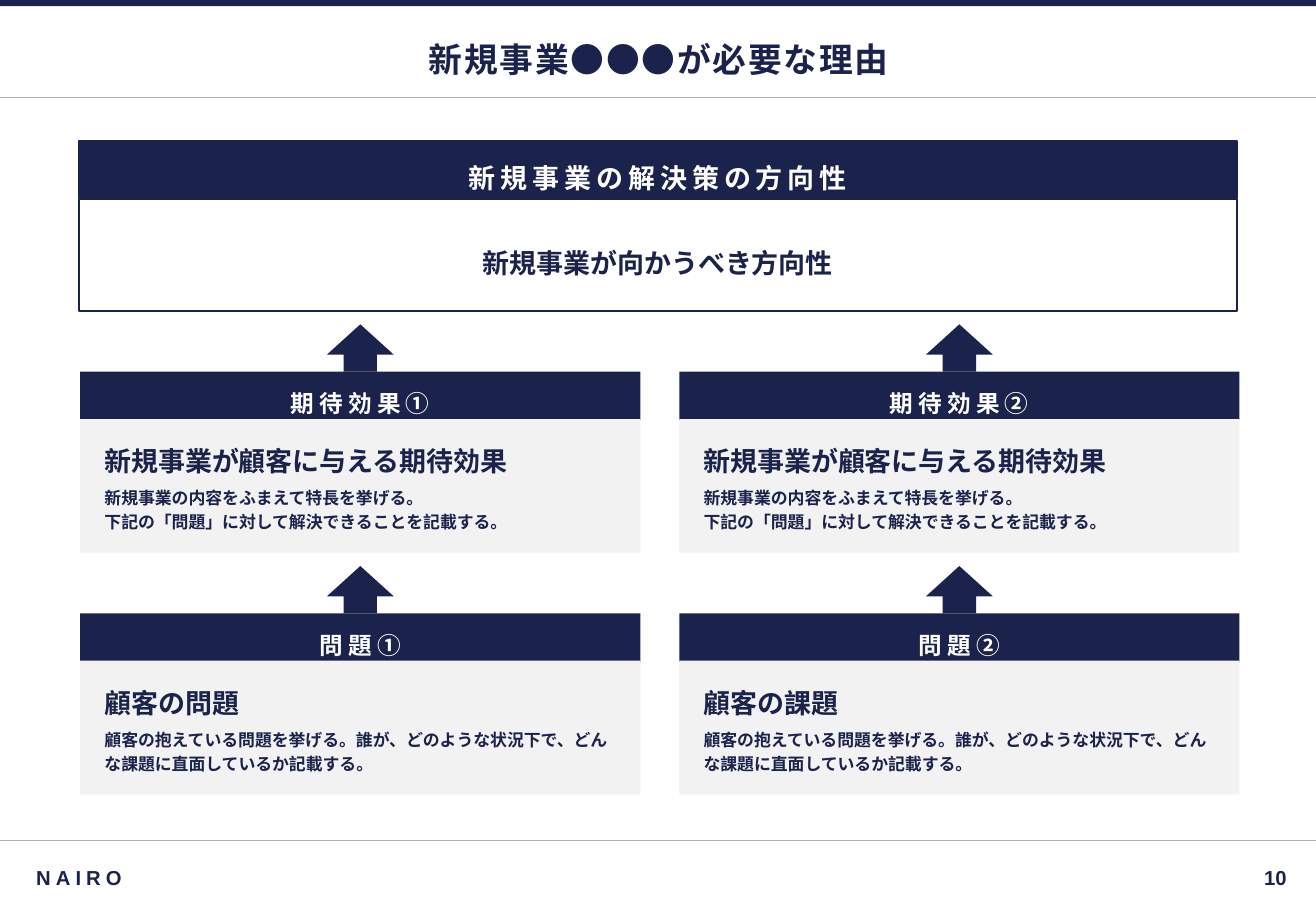
"""Build a slide on why a new business is needed."""
from dataclasses import dataclass
from lxml import etree
from pptx import Presentation
from pptx.dml.color import RGBColor
from pptx.enum.shapes import MSO_CONNECTOR, MSO_SHAPE
from pptx.enum.text import MSO_ANCHOR, MSO_AUTO_SIZE, PP_ALIGN
from pptx.oxml.ns import qn
from pptx.util import Inches, Pt

RECT, ARROW = MSO_SHAPE.RECTANGLE, MSO_SHAPE.UP_ARROW
LEFT, MID, RIGHT = PP_ALIGN.LEFT, PP_ALIGN.CENTER, PP_ALIGN.RIGHT


@dataclass(frozen=True)
class Theme:
    navy: RGBColor = RGBColor.from_string("1B224C")
    pale: RGBColor = RGBColor.from_string("F2F2F2")
    gray: RGBColor = RGBColor.from_string("AFAFAF")
    white: RGBColor = RGBColor.from_string("FFFFFF")
    latin: str = "Arial"
    asian: str = "Noto Sans CJK JP"
    title: int = 20
    large: int = 16
    head: int = 14
    foot: int = 12
    small: int = 10


look = Theme()


def add_box(kind, area, fill=None, line=None):
    box = slide.shapes.add_shape(kind, *map(Inches, area))
    box.shadow.inherit = False
    if fill is None:
        box.fill.background()
    else:
        box.fill.solid()
        box.fill.fore_color.rgb = fill
    if line is None:
        box.line.fill.background()
    else:
        box.line.color.rgb = line
        box.line.width = Pt(1.5)
    return box


def write(box, pad, rows, align, color=look.navy, track=0, gap=None, latin=look.latin):
    frame = box.text_frame
    frame.word_wrap = True
    frame.auto_size = MSO_AUTO_SIZE.NONE
    frame.vertical_anchor = MSO_ANCHOR.MIDDLE
    sides = map(Inches, pad)
    frame.margin_left, frame.margin_top, frame.margin_right, frame.margin_bottom = sides
    for i, (text, size) in enumerate(rows):
        para = frame.add_paragraph() if i else frame.paragraphs[0]
        para.text = text
        para.alignment = align
        if gap:
            para.line_spacing = gap
        if i:
            para.line_spacing = 1.2
            para.space_before = para.space_after = Pt(4)
        font = para.font
        font.name, font.size, font.bold = latin, Pt(size), True
        font.color.rgb = color
        props = para._p.pPr.find(qn("a:defRPr"))
        props.set("spc", str(track * 100))
        etree.SubElement(props, qn("a:ea")).set("typeface", look.asian)


deck = Presentation()
deck.slide_width, deck.slide_height = Inches(10.83), Inches(7.5)
slide = deck.slides.add_slide(deck.slide_layouts[5])

for y in (6.92, 0.8):
    rule = slide.shapes.add_connector(
        MSO_CONNECTOR.STRAIGHT, 0, Inches(y), Inches(10.83), Inches(y))
    rule.line.color.rgb = look.gray
    rule.line.width = Pt(0.75)
    etree.SubElement(rule._element.spPr, qn("a:effectLst"))
add_box(RECT, (0, 0, 10.83, 0.05), look.navy)

title = slide.shapes.title
title.left, title.top, title.width, title.height = map(Inches, (0.5, 0.21, 9.84, 0.51))
write(title, (0.04, 0.08, 0.04, 0.04), [("新規事業●●●が必要な理由", look.title)],
      MID, track=1, latin=look.asian)

feet = [
    ("NAIRO", (0.2, 7.07, 8.66, 0.31), (0.1, 0.05, 0.1, 0.05), LEFT, 3),
    ("10", (9.06, 7.07, 1.57, 0.31), (0.04,) * 4, RIGHT, 0),
]
for text, area, pad, align, track in feet:
    box = slide.shapes.add_textbox(*map(Inches, area))
    write(box, pad, [(text, look.foot)], align, track=track)

tight, roomy = (0.1, 0.05, 0.1, 0.05), (0.2, 0.16, 0.2, 0.12)
goal = add_box(RECT, (0.65, 1.64, 9.53, 0.92), line=look.navy)
write(goal, (0.2, 0.12, 0.2, 0.12), [("新規事業が向かうべき方向性", look.large)],
      MID, gap=1.5)
banner = add_box(RECT, (0.65, 1.16, 9.53, 0.47), look.navy, look.navy)
write(banner, tight, [("新規事業の解決策の方向性", look.large)],
      MID, look.white, 3, 1.5)

effect = "新規事業の内容をふまえて特長を挙げる。\n下記の「問題」に対して解決できることを記載する。"
issue = "顧客の抱えている問題を挙げる。誰が、どのような状況下で、どんな課題に直面しているか記載する。"
grid = [
    ("期待効果", ("新規事業が顧客に与える期待効果",) * 2, effect),
    ("問題", ("顧客の問題", "顧客の課題"), issue),
]
for row, (label, leads, note) in enumerate(grid):
    for col, lead in enumerate(leads):
        x, y = 0.66 + 4.93 * col, 3.06 + 1.99 * row
        head = add_box(RECT, (x, y, 4.61, 0.4), look.navy)
        write(head, tight, [(label + "①②"[col], look.head)], MID, look.white, 3, 1.5)
        card = add_box(RECT, (x, y + 0.39, 4.61, 1.1), look.pale)
        write(card, roomy, [(lead, look.large), (note, look.small)], LEFT)
        arrow = add_box(ARROW, (x + 2.03, y - 0.39, 0.55, 0.39), look.navy)
        arrow.adjustments[1] = 0.64

deck.save("out.pptx")
